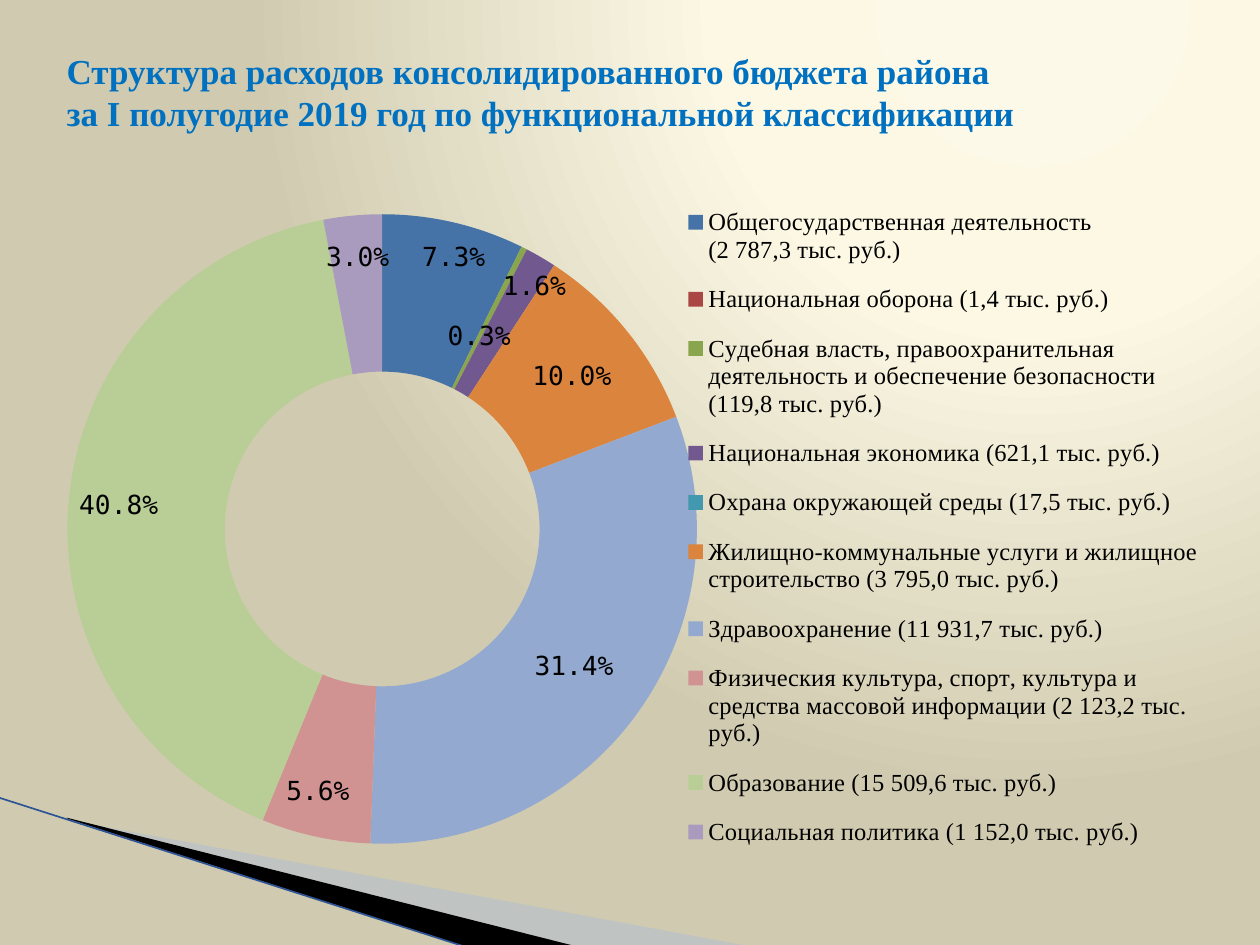
from dataclasses import dataclass
from typing import Optional

from lxml import etree
from pptx import Presentation
from pptx.chart.data import CategoryChartData as ChartData
from pptx.dml.color import RGBColor as Rgb
from pptx.enum.chart import XL_CHART_TYPE as Kind, XL_LEGEND_POSITION as Side
from pptx.enum.shapes import MSO_CONNECTOR as Link
from pptx.enum.text import MSO_ANCHOR as Anchor
from pptx.oxml import parse_xml
from pptx.oxml.ns import nsdecls, qn
from pptx.util import Inches, Pt


@dataclass(frozen=True)
class Theme:
    serif: str = "Times New Roman"
    mono: str = "DejaVu Sans Mono"
    title: str = "0070C0"
    ink: str = "000000"
    pale: str = "A7B9DB"
    edge: str = "2F5496"
    glow: tuple = ((0, "FDF9E8"), (40, "FCF8E4"), (100, "D0CBB0"))
    head: int = 20
    base: int = 18
    label: int = 15
    legend: int = 14


@dataclass(frozen=True)
class Slice:
    name: str
    share: Optional[float]
    color: str
    dx: float = 0  # label shift, as a part of the chart's width
    dy: float = 0  # label shift, as a part of the chart's height


THEME = Theme()
SLICES = [
    Slice("Общегосударственная деятельность\n(2 787,3 тыс. руб.)", 0.073, "4572A7", 0.015, -0.058),
    Slice("Национальная оборона (1,4 тыс. руб.)", None, "AA4643"),
    Slice("Судебная власть, правоохранительная деятельность и обеспечение безопасности\n"
          "(119,8 тыс. руб.)", 0.003, "89A54E", -0.008, 0.025),
    Slice("Национальная экономика (621,1 тыс. руб.)", 0.016, "71588F", 0.028, -0.054),
    Slice("Охрана окружающей среды (17,5 тыс. руб.)", None, "4198AF"),
    Slice("Жилищно-коммунальные услуги и жилищное строительство (3 795,0 тыс. руб.)",
          0.1, "DB843D", 0.005, -0.006),
    Slice("Здравоохранение (11 931,7 тыс. руб.)", 0.314, "93A9CF"),
    Slice("Физическия культура, спорт, культура и средства массовой информации "
          "(2 123,2 тыс. руб.)", 0.056, "D19392", -0.012, 0.043),
    Slice("Образование (15 509,6 тыс. руб.)", 0.408, "B9CD96", -0.024, 0),
    Slice("Социальная политика (1 152,0 тыс. руб.)", 0.03, "A99BBD", -0.002, -0.051),
]


def set_font(font, face: str, size: int, color: str, bold: bool = False) -> None:
    font.name, font.size, font.bold = face, Pt(size), bold
    font.color.rgb = Rgb.from_string(color)


def paint_back(slide) -> None:
    stops = "".join(f'<a:gs pos="{at * 1000}"><a:srgbClr val="{color}"/></a:gs>'
                    for at, color in THEME.glow)
    back = parse_xml(
        f'<p:bg {nsdecls("p", "a")}><p:bgPr><a:gradFill rotWithShape="1"><a:gsLst>{stops}</a:gsLst>'
        '<a:path path="circle"><a:fillToRect l="65000" t="0" r="0" b="98000"/></a:path>'
        '</a:gradFill><a:effectLst/></p:bgPr></p:bg>')
    slide.element.cSld.insert(0, back)


def add_wedge(slide, dots: list, color: str, alpha: int = 100) -> None:
    points = [(Inches(x), Inches(y)) for x, y in dots]
    pen = slide.shapes.build_freeform(*points[0])
    pen.add_line_segments(points[1:], close=True)
    shape = pen.convert_to_shape()
    shape.shadow.inherit = False
    shape.line.fill.background()
    shape.fill.solid()
    shape.fill.fore_color.rgb = Rgb.from_string(color)
    if alpha < 100:
        tone = shape.fill._xPr.find(f".//{qn('a:srgbClr')}")
        etree.SubElement(tone, qn("a:alpha")).set("val", str(alpha * 1000))


def add_edge(slide, start: tuple, end: tuple) -> None:
    line = slide.shapes.add_connector(Link.STRAIGHT, *map(Inches, start + end))
    line.line.color.rgb = Rgb.from_string(THEME.edge)
    line.line.width = Pt(0.95)
    etree.SubElement(line._element.spPr, qn("a:effectLst"))


def make_layout(x: float, y: float, size: Optional[tuple] = None, inner: bool = False):
    """Manual layout: a shift without size, a frame with one."""
    parts = [("layoutTarget", "inner")] if inner else []
    if size:
        parts += [("xMode", "edge"), ("yMode", "edge")]
    parts += [("x", x), ("y", y)]
    if size:
        parts += [("w", size[0]), ("h", size[1])]
    body = "".join(f'<c:{tag} val="{val}"/>' for tag, val in parts)
    return parse_xml(f'<c:layout {nsdecls("c")}><c:manualLayout>{body}</c:manualLayout></c:layout>')


def place(parent, layout, after: Optional[str] = None) -> None:
    for old in parent.findall(qn("c:layout")):
        parent.remove(old)
    if after:
        parent.find(qn(after)).addnext(layout)
    else:
        parent.insert(0, layout)


def add_ring(slide) -> None:
    data = ChartData(number_format="0.0%")
    data.categories = [item.name for item in SLICES]
    data.add_series("Series 1", [item.share for item in SLICES])
    frame = slide.shapes.add_chart(Kind.DOUGHNUT, Inches(0.35), Inches(1.31),
                                   Inches(9.45), Inches(5.75), data)
    chart = frame.chart
    chart.has_title = False
    set_font(chart.font, THEME.mono, THEME.base, THEME.ink)
    plot = chart.plots[0]
    plot.vary_by_categories = True
    place(chart._chartSpace.chart.plotArea, make_layout(0.01, 0.068, (0.548, 0.869), True))

    # Legend
    chart.has_legend = True
    legend = chart.legend
    legend.position = Side.RIGHT
    legend.include_in_layout = False
    set_font(legend.font, THEME.serif, THEME.legend, THEME.ink)
    place(legend._element, make_layout(0.53, 0.03, (0.45, 0.94)), "c:legendPos")

    # Slices and labels
    series = plot.series[0]
    labels = series.data_labels
    labels.show_value = True
    labels.show_percentage = False
    labels.show_legend_key = False
    labels.number_format, labels.number_format_is_linked = "0.0%", False
    set_font(labels.font, THEME.mono, THEME.label, THEME.ink)
    for i, item in enumerate(SLICES):
        look = series.points[i].format
        look.fill.solid()
        look.fill.fore_color.rgb = Rgb.from_string(item.color)
        look.line.fill.background()
        if item.dx or item.dy:
            label = labels._element._insert_dLbl_in_sequence(i)
            for tag in ("c:showCatName", "c:showSerName", "c:showPercent", "c:showLegendKey"):
                label.find(qn(tag)).set("val", "0")
            for pos in label.findall(qn("c:dLblPos")):
                label.remove(pos)
            place(label, make_layout(item.dx, item.dy), "c:idx")
            form = parse_xml(f'<c:numFmt {nsdecls("c")} formatCode="0.0%" sourceLinked="0"/>')
            label.find(qn("c:layout")).addnext(form)
            set_font(series.points[i].data_label.font, THEME.mono, THEME.label, THEME.ink)


def add_title(slide) -> None:
    box = slide.shapes.add_textbox(Inches(0.43), Inches(0.3), Inches(9.29), Inches(0.85))
    frame = box.text_frame
    frame.word_wrap = True
    frame.vertical_anchor = Anchor.MIDDLE
    para = frame.paragraphs[0]
    para.text = ("Структура расходов консолидированного бюджета района\v"
                 "за I полугодие 2019 год по функциональной классификации")
    set_font(para.font, THEME.serif, THEME.head, THEME.title, True)


def main() -> None:
    deck = Presentation()
    deck.slide_width, deck.slide_height = Inches(10), Inches(7.5)
    slide = deck.slides.add_slide(deck.slide_layouts[6])
    paint_back(slide)
    # Corner wedges
    add_wedge(slide, [(0.55, 6.51), (5.95, 7.51), (4.56, 7.51), (0.55, 6.5)], THEME.pale, 40)
    add_wedge(slide, [(0.53, 6.49), (4.57, 7.51), (3.72, 7.52), (0.54, 6.5)], THEME.ink)
    add_edge(slide, (-0.01, 6.33), (3.71, 7.52))
    # Content
    add_ring(slide)
    add_title(slide)
    deck.save("out.pptx")


if __name__ == "__main__":
    main()
